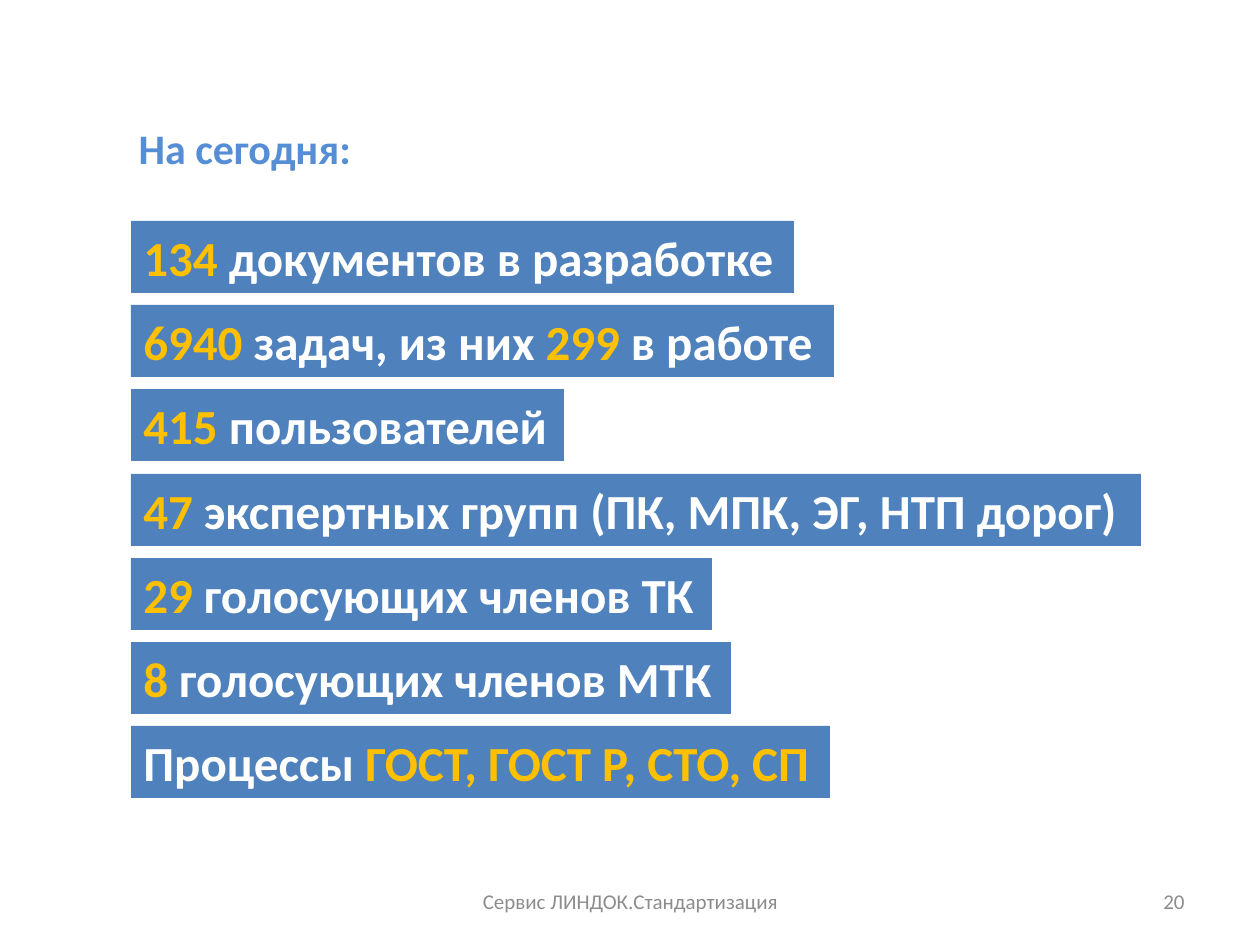
import pptx
import pptx.dml.color
import pptx.enum.text
import pptx.util

RGBColor = pptx.dml.color.RGBColor
ALIGN = pptx.enum.text.PP_ALIGN
ANCHOR = pptx.enum.text.MSO_ANCHOR
AUTO_SIZE = pptx.enum.text.MSO_AUTO_SIZE

HEADING_BLUE = RGBColor(0x55, 0x8E, 0xD5)
BAR_BLUE = RGBColor(0x4F, 0x81, 0xBD)
GOLD = RGBColor(0xFF, 0xC0, 0x00)
WHITE = RGBColor(0xFF, 0xFF, 0xFF)
GREY = RGBColor(0x8C, 0x8C, 0x8C)

PX = pptx.util.Inches(1) / 126
BAR_LEFT, BAR_TOP, BAR_HEIGHT, BAR_STEP = 131, 221, 72, 84.2

# Bar width and its text, cut into (words, colour)
FACTS = [
    (663, [("134 ", GOLD), ("документов в разработке", WHITE)]),
    (703, [("6940", GOLD), (" задач, из них ", WHITE),
           ("299", GOLD), (" в работе", WHITE)]),
    (433, [("415", GOLD), (" пользователей", WHITE)]),
    (1010, [("47 ", GOLD),
            ("экспертных групп (ПК, МПК, ЭГ, НТП дорог)", WHITE)]),
    (581, [("29", GOLD), (" голосующих членов ТК", WHITE)]),
    (600, [("8", GOLD), (" голосующих членов МТК", WHITE)]),
    (699, [("Процессы ", WHITE), ("ГОСТ, ГОСТ Р, СТО, СП", GOLD)]),
]


def emu(*lengths):
    return [round(length * PX) for length in lengths]


class Deck:
    font_name = "Calibri"

    def __init__(self, width, height):
        self.presentation = pptx.Presentation()
        (self.presentation.slide_width,
         self.presentation.slide_height) = emu(width, height)
        self.slide = self.presentation.slides.add_slide(
            self.presentation.slide_layouts.get_by_name("Title Only"))

    def set_text(self, frame, runs, size, bold=False, align=ALIGN.LEFT):
        """Fill the first paragraph with runs of (words, colour)."""
        paragraph = frame.paragraphs[0]
        paragraph.alignment = align
        paragraph.font.name = self.font_name
        paragraph.font.size = pptx.util.Pt(size)
        paragraph.font.bold = bold
        for words, colour in runs:
            run = paragraph.add_run()
            run.text = words
            run.font.color.rgb = colour

    def heading(self, words, left, top, width, height):
        title = self.slide.shapes.title
        title.left, title.top, title.width, title.height = emu(
            left, top, width, height)
        frame = title.text_frame
        frame.vertical_anchor = ANCHOR.TOP
        frame.auto_size = AUTO_SIZE.NONE
        self.set_text(frame, [(words, HEADING_BLUE)], 24, bold=True)

    def bar(self, runs, left, top, width, height):
        bar = self.slide.shapes.add_textbox(*emu(left, top, width, height))
        bar.fill.solid()
        bar.fill.fore_color.rgb = BAR_BLUE
        frame = bar.text_frame
        frame.word_wrap = False
        frame.auto_size = AUTO_SIZE.SHAPE_TO_FIT_TEXT
        self.set_text(frame, runs, 28, bold=True)

    def footer(self, words, align, left, top, width, height):
        footer = self.slide.shapes.add_textbox(*emu(left, top, width, height))
        frame = footer.text_frame
        frame.word_wrap = True
        frame.vertical_anchor = ANCHOR.MIDDLE
        self.set_text(frame, [(words, GREY)], 12, align=align)


def main():
    deck = Deck(1260, 945)
    deck.heading("На сегодня:", 126, 116, 1040, 63)
    for row, (width, runs) in enumerate(FACTS):
        deck.bar(runs, BAR_LEFT, round(BAR_TOP + row * BAR_STEP),
                 width, BAR_HEIGHT)
    deck.footer("Сервис ЛИНДОК.Стандартизация", ALIGN.CENTER,
                431, 876, 399, 50)
    deck.footer("20", ALIGN.RIGHT, 903, 876, 294, 50)
    deck.presentation.save("out.pptx")


if __name__ == "__main__":
    main()
